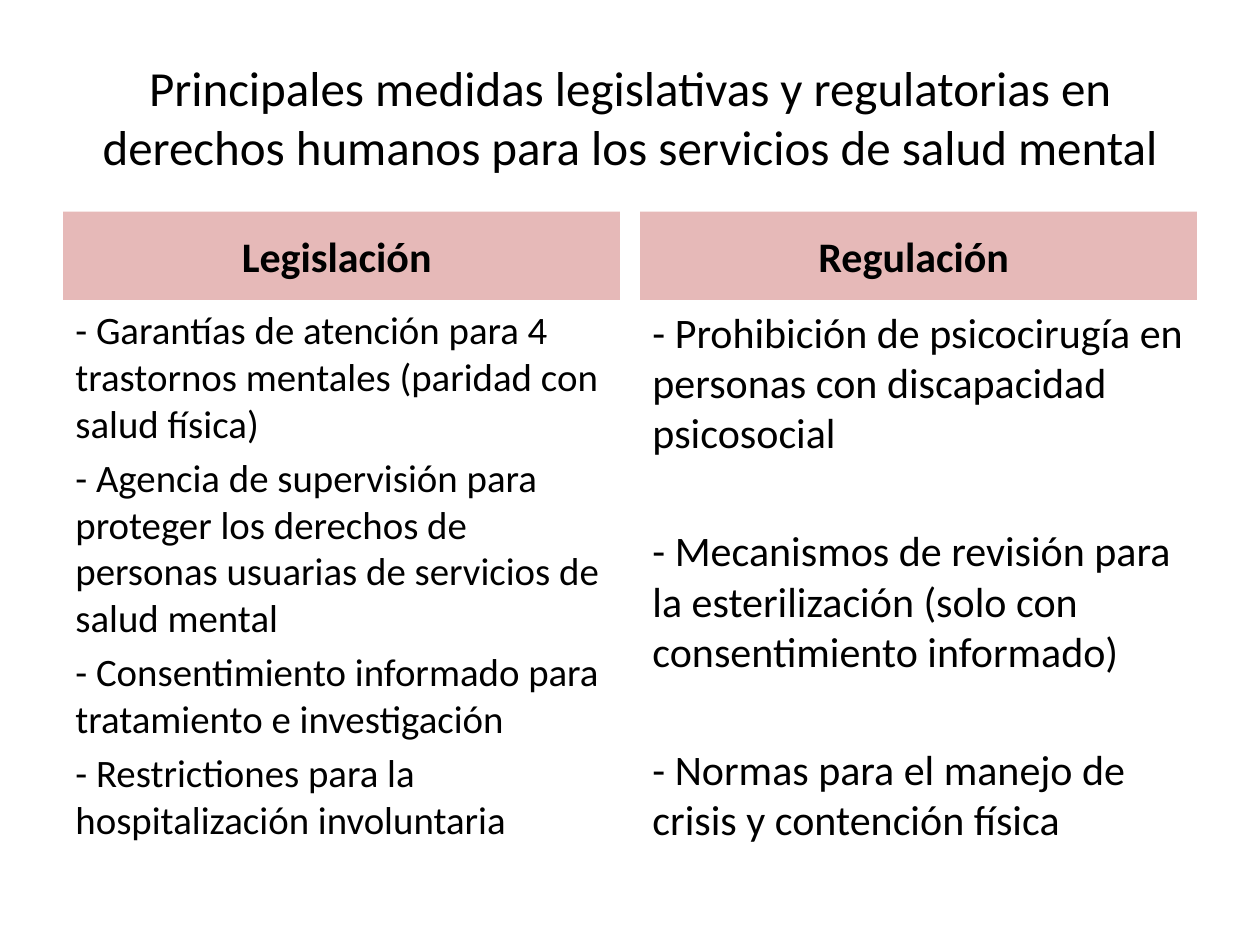
from dataclasses import dataclass

from pptx import Presentation
from pptx.dml.color import RGBColor
from pptx.enum.shapes import MSO_SHAPE
from pptx.enum.text import MSO_ANCHOR, PP_ALIGN
from pptx.util import Inches, Pt


@dataclass(frozen=True)
class Theme:
    font: str = "Calibri"
    ink: RGBColor = RGBColor(0x00, 0x00, 0x00)
    band: RGBColor = RGBColor(0xE6, 0xB9, 0xB8)
    title_size: float = 28
    heading_size: float = 24


@dataclass(frozen=True)
class Box:
    left: float
    top: float
    width: float
    height: float

    def inches(self):
        return [Inches(n) for n in (self.left, self.top, self.width, self.height)]


@dataclass(frozen=True)
class Topic:
    heading: str
    points: tuple
    size: float
    gap: float


THEME = Theme()
TITLE = (
    "Principales medidas legislativas y regulatorias en "
    "derechos humanos para los servicios de salud mental"
)
TOPICS = (
    Topic(
        "Legislación ",
        (
            "- Garantías de atención para 4 trastornos mentales (paridad con salud física)",
            "- Agencia de supervisión para proteger los derechos de personas usuarias "
            "de servicios de salud mental",
            "- Consentimiento informado para tratamiento e investigación",
            "- Restrictiones para la hospitalización involuntaria",
        ),
        size=22.2,
        gap=4.4,
    ),
    Topic(
        "Regulación ",
        (
            "- Prohibición de psicocirugía en personas con discapacidad psicosocial",
            "- Mecanismos de revisión para la esterilización (solo con consentimiento informado)",
            "- Normas para el manejo de crisis y contención física",
        ),
        size=24,
        gap=38.5,
    ),
)
MARGIN = 0.5
COLUMN_WIDTH = 4.42
COLUMN_GAP = 0.16
HEADING_HEIGHT = 0.7


def format_paragraph(para, size, align, bold=False):
    para.alignment = align
    for span in para.runs:
        span.font.name = THEME.font
        span.font.size = Pt(size)
        span.font.bold = bold
        span.font.color.rgb = THEME.ink


def place_title(page, box):
    title = page.shapes.title
    title.left, title.top, title.width, title.height = box.inches()
    frame = title.text_frame
    frame.text = TITLE
    frame.vertical_anchor = MSO_ANCHOR.MIDDLE
    format_paragraph(frame.paragraphs[0], THEME.title_size, PP_ALIGN.CENTER)


def add_heading(page, box, topic):
    band = page.shapes.add_shape(MSO_SHAPE.RECTANGLE, *box.inches())
    band.shadow.inherit = False
    band.fill.solid()
    band.fill.fore_color.rgb = THEME.band
    band.line.fill.background()
    frame = band.text_frame
    frame.text = topic.heading
    frame.vertical_anchor = MSO_ANCHOR.MIDDLE
    format_paragraph(frame.paragraphs[0], THEME.heading_size, PP_ALIGN.CENTER, bold=True)


def add_points(page, box, topic):
    frame = page.shapes.add_textbox(*box.inches()).text_frame
    frame.word_wrap = True
    frame.text = "\n".join(topic.points)
    for index, para in enumerate(frame.paragraphs):
        para.space_before = Pt(topic.gap if index else 0)
        format_paragraph(para, topic.size, PP_ALIGN.LEFT)


def add_column(page, box, topic):
    add_heading(page, Box(box.left, box.top, box.width, HEADING_HEIGHT), topic)
    body = Box(box.left, box.top + HEADING_HEIGHT, box.width, box.height - HEADING_HEIGHT)
    add_points(page, body, topic)


def main():
    deck = Presentation()
    deck.slide_width, deck.slide_height = Inches(10), Inches(7.5)
    page = deck.slides.add_slide(deck.slide_layouts.get_by_name("Title Only"))
    place_title(page, Box(MARGIN, 0.3, 9, 1.25))
    for index, topic in enumerate(TOPICS):
        left = MARGIN + index * (COLUMN_WIDTH + COLUMN_GAP)
        add_column(page, Box(left, 1.68, COLUMN_WIDTH, 5.02), topic)
    deck.save("out.pptx")


if __name__ == "__main__":
    main()
